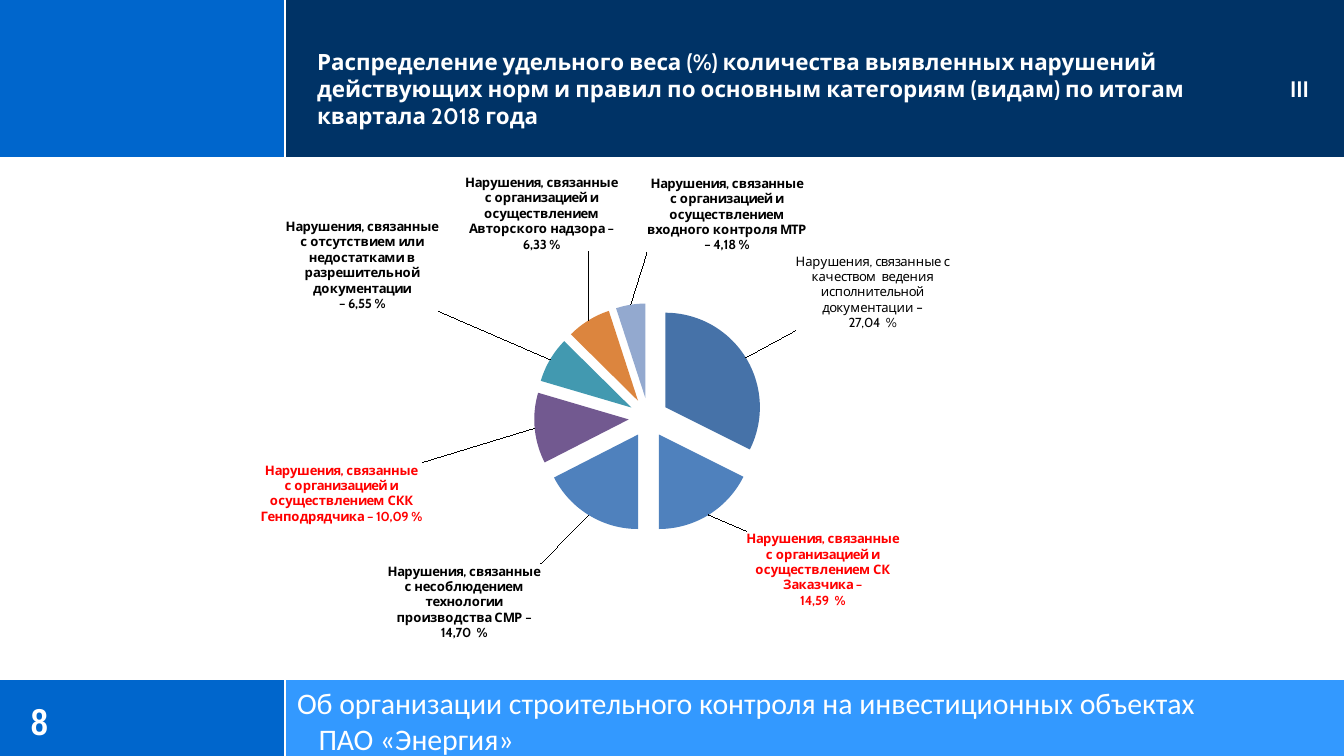
import pptx
import pptx.chart.data
import pptx.dml.color
import pptx.enum.chart
import pptx.enum.shapes
import pptx.enum.text
import pptx.oxml
import pptx.oxml.ns
import pptx.util
from pptx.util import Inches

ANCHOR = pptx.enum.text.MSO_ANCHOR
LABEL_POSITION = pptx.enum.chart.XL_LABEL_POSITION
WHITE, BLACK, RED = "FFFFFF", "000000", "FF0000"
CHART_WIDTH, CHART_HEIGHT = 6.04, 3.48

# Value, slice colour, label text, label shift in inches, label colour, bold
SLICES = [
    (252, "4672A8", "Нарушения, связанные с качеством  ведения исполнительной документации –\n27,04  %",
     (0.32, -0.17), BLACK, False),
    (137, "4F81BD", "Нарушения, связанные с организацией и осуществлением СК Заказчика –\n14,59  %",
     (0.25, 0.07), RED, True),
    (136, "4F81BD", "Нарушения, связанные с несоблюдением технологии производства СМР – 14,70  %",
     (-0.33, 0.31), BLACK, True),
    (94, "725990", "Нарушения, связанные с организацией и осуществлением СКК Генподрядчика – 10,09 %",
     (-0.78, 0.25), RED, True),
    (61, "4299B0", "Нарушения, связанные с отсутствием или недостатками в разрешительной документации\n– 6,55 %",
     (-0.78, -0.33), BLACK, True),
    (59, "DC853E", "Нарушения, связанные с организацией и осуществлением Авторского надзора – 6,33 %",
     (0.25, -0.46), BLACK, True),
    (39, "93A9CF", "Нарушения, связанные с организацией и осуществлением входного контроля МТР – 4,18 %",
     (1.32, -0.33), BLACK, True),
]


def rgb(value):
    return pptx.dml.color.RGBColor.from_string(value)


def paint(fill, color):
    fill.solid()
    fill.fore_color.rgb = rgb(color)


def format_font(font, size, name, color, bold=False):
    values = {"size": pptx.util.Pt(size), "name": name, "bold": bold}
    for attribute, value in values.items():
        setattr(font, attribute, value)
    font.color.rgb = rgb(color)


def add_band(slide, left, top, width, height, color):
    shape = slide.shapes.add_shape(
        pptx.enum.shapes.MSO_SHAPE.RECTANGLE,
        Inches(left), Inches(top), Inches(width), Inches(height))
    shape.shadow.inherit = False
    paint(shape.fill, color)
    shape.line.fill.background()


def add_line(slide, x1, y1, x2, y2):
    connector = slide.shapes.add_connector(
        pptx.enum.shapes.MSO_CONNECTOR.STRAIGHT,
        Inches(x1), Inches(y1), Inches(x2), Inches(y2))
    connector.line.color.rgb = rgb(WHITE)
    connector.line.width = pptx.util.Pt(1.25)
    connector._element.spPr.append(pptx.oxml.parse_xml(
        f'<a:effectLst {pptx.oxml.ns.nsdecls("a")}/>'))


def add_text(slide, left, top, width, height, text, anchor, size, font, bold=False):
    box = slide.shapes.add_textbox(
        Inches(left), Inches(top), Inches(width), Inches(height))
    frame = box.text_frame
    frame_format = {"word_wrap": True, "vertical_anchor": anchor, "margin_left": 0,
                    "margin_top": 0, "margin_right": 0, "margin_bottom": 0}
    for name, value in frame_format.items():
        setattr(frame, name, value)
    paragraph = frame.paragraphs[0]
    paragraph.text = text
    for run in paragraph.runs:
        format_font(run.font, size, font, WHITE, bold)
    return paragraph


def manual_layout(x, y, extra_before="", extra_after=""):
    return pptx.oxml.parse_xml(
        f'<c:layout {pptx.oxml.ns.nsdecls("c")}><c:manualLayout>{extra_before}'
        f'<c:x val="{x:.4f}"/><c:y val="{y:.4f}"/>{extra_after}'
        '</c:manualLayout></c:layout>')


def add_slice_label(point, text, shift, color, bold):
    label = point.data_label
    frame = label.text_frame
    frame.text = text
    frame.word_wrap = True
    for paragraph in frame.paragraphs:
        for run in paragraph.runs:
            format_font(run.font, 7, "Cabin", color, bold)
    label.position = LABEL_POSITION.OUTSIDE_END
    # Move the label away from its slice
    element = label._get_or_add_dLbl()
    element.find(pptx.oxml.ns.qn("c:idx")).addnext(
        manual_layout(shift[0] / CHART_WIDTH, shift[1] / CHART_HEIGHT))


def add_pie(slide):
    data = pptx.chart.data.CategoryChartData()
    data.categories = [str(number) for number in range(1, len(SLICES) + 1)]
    data.add_series("Series 1", [entry[0] for entry in SLICES])
    chart = slide.shapes.add_chart(
        pptx.enum.chart.XL_CHART_TYPE.PIE, Inches(1.51), Inches(1.29),
        Inches(CHART_WIDTH), Inches(CHART_HEIGHT), data).chart
    chart.has_title = False
    chart.has_legend = False
    format_font(chart.font, 10, "Calibri", BLACK)

    # Slices with their labels
    series = chart.plots[0].series[0]
    labels = series.data_labels
    labels.show_value = True
    labels.position = LABEL_POSITION.OUTSIDE_END
    format_font(labels.font, 7, "Cabin", BLACK, True)
    for index, (_, fill_color, text, shift, color, bold) in enumerate(SLICES):
        point = series.points[index]
        paint(point.format.fill, fill_color)
        add_slice_label(point, text, shift, color, bold)

    # Pull the slices apart and fix the plot area
    first_point = series._element.find(pptx.oxml.ns.qn("c:dPt"))
    first_point.addprevious(pptx.oxml.parse_xml(
        f'<c:explosion {pptx.oxml.ns.nsdecls("c")} val="21"/>'))
    plot_area = chart._chartSpace.chart.plotArea
    for layout in plot_area.findall(pptx.oxml.ns.qn("c:layout")):
        plot_area.remove(layout)
    plot_area.insert(0, manual_layout(
        0.295, 0.278,
        '<c:layoutTarget val="inner"/><c:xMode val="edge"/><c:yMode val="edge"/>',
        '<c:w val="0.508"/><c:h val="0.489"/>'))


def add_frame(slide):
    # Footer and header bands
    add_band(slide, 0, 5.06, 2.12, 0.59, "0066CC")
    add_band(slide, 2.12, 5.06, 7.88, 0.59, "3399FF")
    add_band(slide, 2.12, 0, 7.88, 1.18, "003366")
    add_band(slide, 0, 0, 2.12, 1.18, "0066CC")
    # White dividers
    for ends in [(2.12, 5.06, 2.12, 5.65), (2.12, 0, 2.12, 1.18),
                 (0, 5.05, 10, 5.05), (0, 1.18, 10, 1.18)]:
        add_line(slide, *ends)


def add_headings(slide):
    add_text(slide, 0.23, 5.1, 1.62, 0.52, "8", ANCHOR.MIDDLE, 20, "Arial Narrow", True)

    # Title, with the quarter number on a right tab
    title = add_text(
        slide, 2.36, 0.17, 7.4, 0.79,
        "Распределение удельного веса (%) количества выявленных нарушений\v"
        "действующих норм и правил по основным категориям (видам) по итогам\tIII\v"
        "квартала 2018 года", ANCHOR.BOTTOM, 12, "Cabin", True)
    title._p.get_or_add_pPr().append(pptx.oxml.parse_xml(
        f'<a:tabLst {pptx.oxml.ns.nsdecls("a")}>'
        f'<a:tab pos="{Inches(7.38)}" algn="r"/></a:tabLst>'))

    # Footer with a hanging first line
    footer = add_text(
        slide, 2.12, 5.11, 7.88, 0.5,
        "Об организации строительного контроля на инвестиционных объектах\vПАО «Энергия»",
        ANCHOR.MIDDLE, 16, "Calibri")
    properties = footer._p.get_or_add_pPr()
    properties.set("marL", str(Inches(0.25)))
    properties.set("indent", str(Inches(-0.16)))


def main():
    presentation = pptx.Presentation()
    presentation.slide_width = Inches(10)
    presentation.slide_height = Inches(10) * 9 // 16
    slide = presentation.slides.add_slide(presentation.slide_layouts[6])
    add_frame(slide)
    add_headings(slide)
    add_pie(slide)
    presentation.save("out.pptx")


if __name__ == "__main__":
    main()
